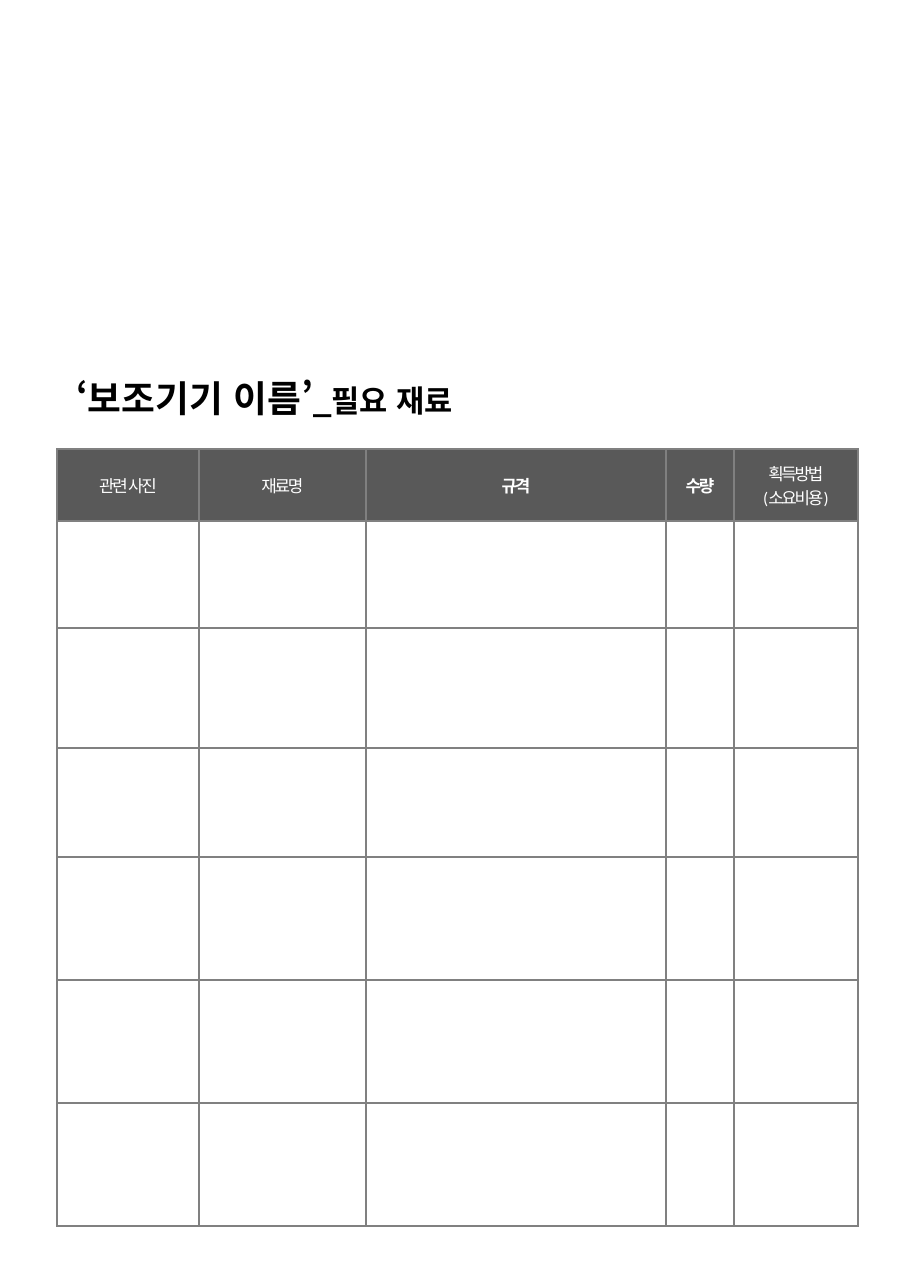
from lxml.etree import SubElement
from pptx import Presentation
from pptx.dml.color import RGBColor
from pptx.enum.lang import MSO_LANGUAGE_ID as Lang
from pptx.enum.text import MSO_ANCHOR as Anchor, PP_ALIGN as Align
from pptx.oxml.ns import qn
from pptx.util import Pt

# Content
TITLE = [("‘보조기기 이름’_", 24, "Calibri"), ("필요 재료", 20, "Noto Sans CJK KR")]
HEADERS = [
    (["관련 사진"], False),
    (["재료명"], False),
    (["규격"], True),
    (["수량"], True),
    (["획득방법", "(소요비용)"], False),
]

# Layout in px
PAGE_SIZE = (911, 1288)
TITLE_BOX = (57, 367, 693, 62)
TITLE_INDENT = 8
TABLE_LEFT, TABLE_TOP = 57, 449
COLUMN_WIDTHS = [142, 167, 300, 68, 124]
ROW_HEIGHTS = [72, 107, 120, 109, 123, 123, 123]

# Colours and fonts
BLACK, WHITE, HEADER_FILL, BORDER = "000000", "FFFFFF", "595959", "808080"
KOREAN_FONT = "Noto Sans CJK KR"
EMU_PER_PX = 914400 / 110.2


def px(length):
    return round(length * EMU_PER_PX)


def color(value):
    return RGBColor.from_string(value)


def add_text(para, text, size, fill, font="Calibri", bold=False, spacing=0):
    span = para.add_run()
    span.text = text
    span.font.size = Pt(size)
    span.font.bold = bold
    span.font.name = font
    span.font.language_id = Lang.KOREAN
    span.font.fill.solid()
    span.font.fill.fore_color.rgb = color(fill)
    properties = span.font._element
    SubElement(properties, qn("a:ea"), typeface=KOREAN_FONT)
    if spacing:
        properties.set("spc", str(round(spacing * 100)))


def add_borders(cell):
    properties = cell._tc.get_or_add_tcPr()
    for position, side in enumerate(("lnL", "lnR", "lnT", "lnB")):
        line = properties.makeelement(qn(f"a:{side}"), {"w": str(Pt(1))})
        fill = SubElement(line, qn("a:solidFill"))
        SubElement(fill, qn("a:srgbClr"), val=BORDER)
        properties.insert(position, line)


deck = Presentation()
deck.slide_width, deck.slide_height = map(px, PAGE_SIZE)
page = deck.slides.add_slide(deck.slide_layouts[6])

# Materials table
frame = page.shapes.add_table(
    len(ROW_HEIGHTS), len(COLUMN_WIDTHS), px(TABLE_LEFT), px(TABLE_TOP),
    px(sum(COLUMN_WIDTHS)), px(sum(ROW_HEIGHTS)))
table = frame.table
table.horz_banding = False
for column, width in zip(table.columns, COLUMN_WIDTHS):
    column.width = px(width)
for row, height in zip(table.rows, ROW_HEIGHTS):
    row.height = px(height)
for cell in table.iter_cells():
    cell.fill.background()
    add_borders(cell)

# Header row
for cell, (lines, bold) in zip(table.rows[0].cells, HEADERS):
    cell.fill.solid()
    cell.fill.fore_color.rgb = color(HEADER_FILL)
    cell.vertical_anchor = Anchor.MIDDLE
    for number, line in enumerate(lines):
        text = cell.text_frame
        para = text.add_paragraph() if number else text.paragraphs[0]
        para.alignment = Align.CENTER
        add_text(para, line, 11, WHITE, bold=bold, spacing=-1.5)

# Title
box = page.shapes.add_textbox(*map(px, TITLE_BOX))
box.text_frame.word_wrap = True
box.text_frame.vertical_anchor = Anchor.MIDDLE
box.text_frame.margin_left += px(TITLE_INDENT)
for text, size, font in TITLE:
    add_text(box.text_frame.paragraphs[0], text, size, BLACK, font=font, bold=True)

deck.save("out.pptx")
